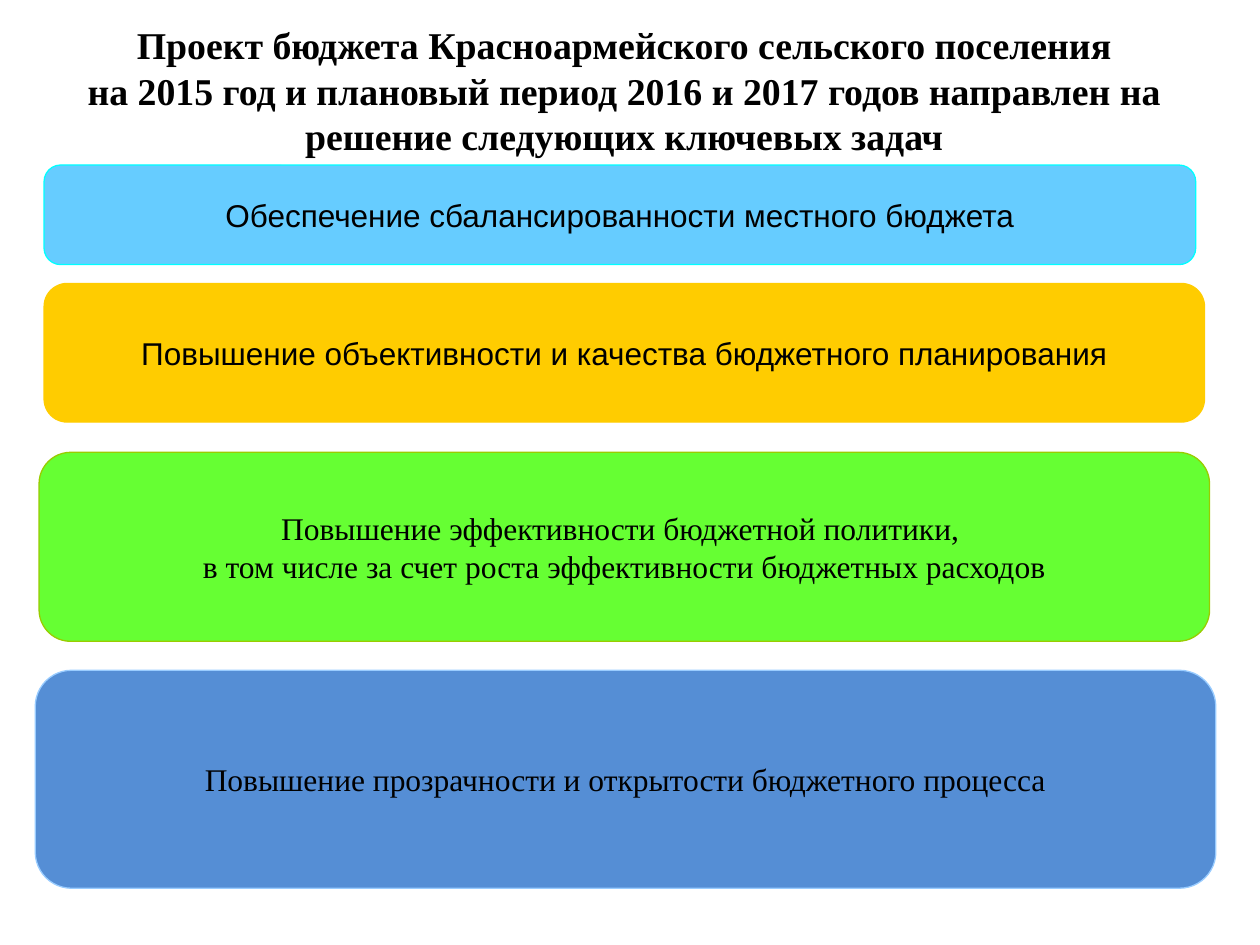
"""Build a slide listing the key tasks of a settlement budget project."""
from dataclasses import dataclass

from pptx import Presentation
from pptx.dml.color import RGBColor
from pptx.enum.shapes import MSO_SHAPE
from pptx.enum.text import MSO_ANCHOR, MSO_AUTO_SIZE, PP_ALIGN
from pptx.slide import Slide
from pptx.text.text import TextFrame
from pptx.util import Inches, Pt

COLORS = {
    "text": "000000",
    "sky": "66CCFF",
    "cyan": "00FFFF",
    "amber": "FFCC00",
    "green": "66FF33",
    "olive": "99CC00",
    "blue": "558ED5",
    "pale_blue": "99CCFF",
}
SANS, SERIF = "Arial", "Times New Roman"
HEADING = (
    "Проект бюджета Красноармейского сельского поселения",
    "на 2015 год и плановый период 2016 и 2017 годов направлен на решение следующих ключевых задач",
)


@dataclass(frozen=True)
class Task:
    left: float
    top: float
    width: float
    height: float
    fill: str
    outline: str
    font: str
    lines: tuple[str, ...]


TASKS = (
    Task(0.35, 1.31, 9.14, 0.79, "sky", "cyan", SANS,
         ("Обеспечение сбалансированности местного бюджета",)),
    Task(0.35, 2.25, 9.21, 1.1, "amber", "amber", SANS,
         ("Повышение объективности и качества бюджетного планирования",)),
    Task(0.31, 3.59, 9.29, 1.5, "green", "olive", SERIF,
         ("Повышение эффективности бюджетной политики, ",
          "в том числе за счет роста эффективности бюджетных расходов")),
    Task(0.28, 5.32, 9.37, 1.73, "blue", "pale_blue", SERIF,
         ("Повышение прозрачности и открытости бюджетного процесса",)),
)


def color(name: str) -> RGBColor:
    """Return the named palette colour."""
    return RGBColor.from_string(COLORS[name])


def add_run(paragraph, text: str, font: str, size: float, bold: bool) -> None:
    """Append a formatted run to a paragraph."""
    run = paragraph.add_run()
    run.text = text
    run.font.name = font
    run.font.size = Pt(size)
    run.font.bold = bold
    run.font.color.rgb = color("text")


def center(frame: TextFrame, wrap: bool) -> None:
    """Centre a frame's text vertically and fix its size."""
    frame.auto_size = MSO_AUTO_SIZE.NONE
    frame.word_wrap = wrap
    frame.vertical_anchor = MSO_ANCHOR.MIDDLE


def write_heading(slide: Slide) -> None:
    """Place and fill the title placeholder."""
    heading = slide.shapes.title
    heading.left, heading.top = Inches(0.27), Inches(0.28)
    heading.width, heading.height = Inches(9.37), Inches(0.87)
    center(heading.text_frame, wrap=True)
    paragraph = heading.text_frame.paragraphs[0]
    paragraph.alignment = PP_ALIGN.CENTER
    for index, line in enumerate(HEADING):
        if index:
            paragraph.add_line_break()
        add_run(paragraph, line, SERIF, 21.6, True)


def draw_task(slide: Slide, task: Task) -> None:
    """Draw one task as a rounded block."""
    block = slide.shapes.add_shape(
        MSO_SHAPE.ROUNDED_RECTANGLE,
        Inches(task.left), Inches(task.top), Inches(task.width), Inches(task.height),
    )
    block.shadow.inherit = False
    block.fill.solid()
    block.fill.fore_color.rgb = color(task.fill)
    block.line.color.rgb = color(task.outline)
    block.line.width = Pt(0.75)
    frame = block.text_frame
    center(frame, wrap=False)
    for index, line in enumerate(task.lines):
        paragraph = frame.add_paragraph() if index else frame.paragraphs[0]
        paragraph.alignment = PP_ALIGN.CENTER
        add_run(paragraph, line, task.font, 18, False)


def main() -> None:
    """Build and save the presentation."""
    deck = Presentation()
    deck.slide_width, deck.slide_height = Inches(10), Inches(7.5)
    slide = deck.slides.add_slide(deck.slide_layouts.get_by_name("Title Only"))
    write_heading(slide)
    for task in TASKS:
        draw_task(slide, task)
    deck.save("out.pptx")


if __name__ == "__main__":
    main()
